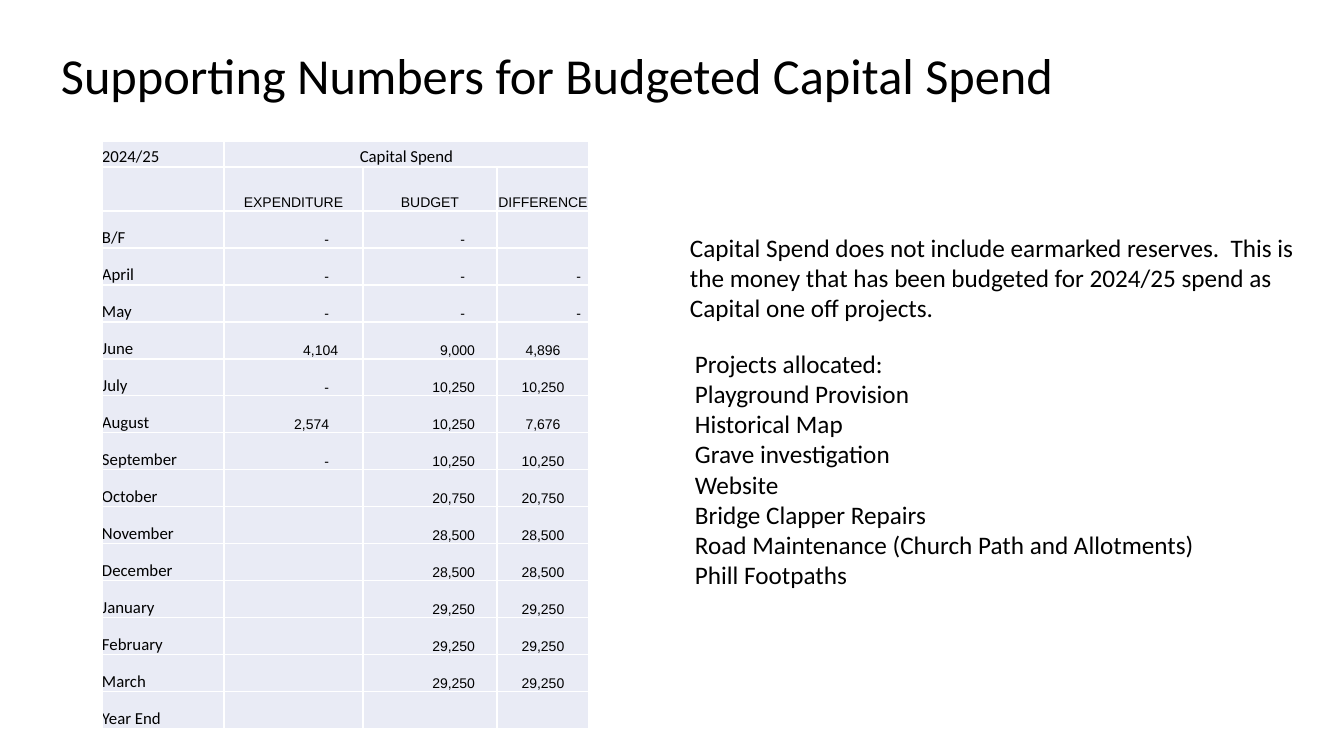
import pptx
import pptx.util
import pptx.dml.color
import pptx.enum.text
import pptx.oxml
import pptx.oxml.ns

PX = 914400 / 100.8
BLACK = pptx.dml.color.RGBColor(0x00, 0x00, 0x00)
PALE = pptx.dml.color.RGBColor(0xE9, 0xEB, 0xF5)
ALIGN = pptx.enum.text.PP_ALIGN
ANCHOR = pptx.enum.text.MSO_ANCHOR

TITLE = "Supporting Numbers for Budgeted Capital Spend"
NOTE = ("Capital Spend does not include earmarked reserves.  This is the money "
        "that has been budgeted for 2024/25 spend as Capital one off projects.")
PROJECTS = [
    "Projects allocated:", "Playground Provision", "Historical Map",
    "Grave investigation", "Website", "Bridge Clapper Repairs",
    "Road Maintenance (Church Path and Allotments)", "Phill Footpaths",
]

WIDTHS = [122, 139, 134, 92]
HEADS = [["2024/25", "Capital Spend", "", ""],
         ["", "EXPENDITURE", "BUDGET", "DIFFERENCE"]]
MONTHS = [
    ["B/F", "-", "-", ""],
    ["April", "-", "-", "-"],
    ["May", "-", "-", "-"],
    ["June", "4,104", "9,000", "4,896"],
    ["July", "-", "10,250", "10,250"],
    ["August", "2,574", "10,250", "7,676"],
    ["September", "-", "10,250", "10,250"],
    ["October", "", "20,750", "20,750"],
    ["November", "", "28,500", "28,500"],
    ["December", "", "28,500", "28,500"],
    ["January", "", "29,250", "29,250"],
    ["February", "", "29,250", "29,250"],
    ["March", "", "29,250", "29,250"],
    ["Year End", "", "", ""],
]
# Right padding of dashes and amounts by column; other cells are centred
DASH_PAD = {1: 34, 2: 32, 3: 8}
SUM_PAD = {1: 25, 2: 22}
AUGUST_PAD = 34


def px(count):
    return pptx.util.Emu(round(count * PX))


def style(frame, size, face="Calibri"):
    for para in frame.paragraphs:
        for run in para.runs:
            run.font.size = pptx.util.Pt(size)
            run.font.name = face
            run.font.bold = False
            run.font.color.rgb = BLACK


def add_text(slide, box, lines, size, anchor=ANCHOR.TOP, space=None):
    frame = slide.shapes.add_textbox(*map(px, box)).text_frame
    frame.word_wrap = True
    frame.vertical_anchor = anchor
    frame.text = "\n".join(lines)
    for para in frame.paragraphs:
        para.line_spacing = space
    style(frame, size)


def add_edges(cell):
    props = cell._tc.get_or_add_tcPr()
    for at, side in enumerate(["lnL", "lnR", "lnT", "lnB"]):
        line = pptx.oxml.parse_xml(
            f'<a:{side} {pptx.oxml.ns.nsdecls("a")} w="12700"><a:solidFill>'
            f'<a:srgbClr val="FFFFFF"/></a:solidFill></a:{side}>')
        props.insert(at, line)


def fill_cell(cell, text, size, face, align, pad=0):
    cell.margin_left = cell.margin_top = cell.margin_bottom = 0
    cell.margin_right = px(pad)
    cell.vertical_anchor = ANCHOR.BOTTOM
    cell.fill.solid()
    cell.fill.fore_color.rgb = PALE
    add_edges(cell)
    if text:
        cell.text_frame.text = text
        cell.text_frame.paragraphs[0].alignment = align
        style(cell.text_frame, size, face)


def find_pad(row, col):
    if row[0] == "August" and col == 1:
        return AUGUST_PAD
    pads = DASH_PAD if row[col] == "-" else SUM_PAD
    return pads.get(col, 0)


def add_spend(slide, left, top):
    rows = HEADS + MONTHS
    highs = [26, 44] + [37] * len(MONTHS)
    frame = slide.shapes.add_table(len(rows), len(WIDTHS), px(left), px(top),
                                   px(sum(WIDTHS)), px(sum(highs)))
    table = frame.table
    table.first_row = table.horz_banding = False
    for col, width in enumerate(WIDTHS):
        table.columns[col].width = px(width)
    for at, row in enumerate(rows):
        table.rows[at].height = px(highs[at])
        for col, text in enumerate(row):
            plain = at == 0 or col == 0
            size, face = (12, "Calibri") if plain else (10, "Arial")
            pad = find_pad(row, col) if at >= len(HEADS) else 0
            align = ALIGN.RIGHT if pad else ALIGN.CENTER
            if col == 0:
                align = ALIGN.LEFT
            fill_cell(table.cell(at, col), text, size, face, align, pad)
    table.cell(0, 1).merge(table.cell(0, 3))


def main():
    deck = pptx.Presentation()
    deck.slide_width, deck.slide_height = px(1344), px(756)
    slide = deck.slides.add_slide(deck.slide_layouts[6])

    # Title
    add_text(slide, (51, 16, 1203, 125), [TITLE], 36, ANCHOR.MIDDLE, 0.9)
    # Monthly spend
    add_spend(slide, 102, 141)
    # Note and project list
    add_text(slide, (680, 227, 642, 102), [NOTE], 18)
    add_text(slide, (685, 343, 642, 285), PROJECTS, 18)

    deck.save("out.pptx")


if __name__ == "__main__":
    main()
